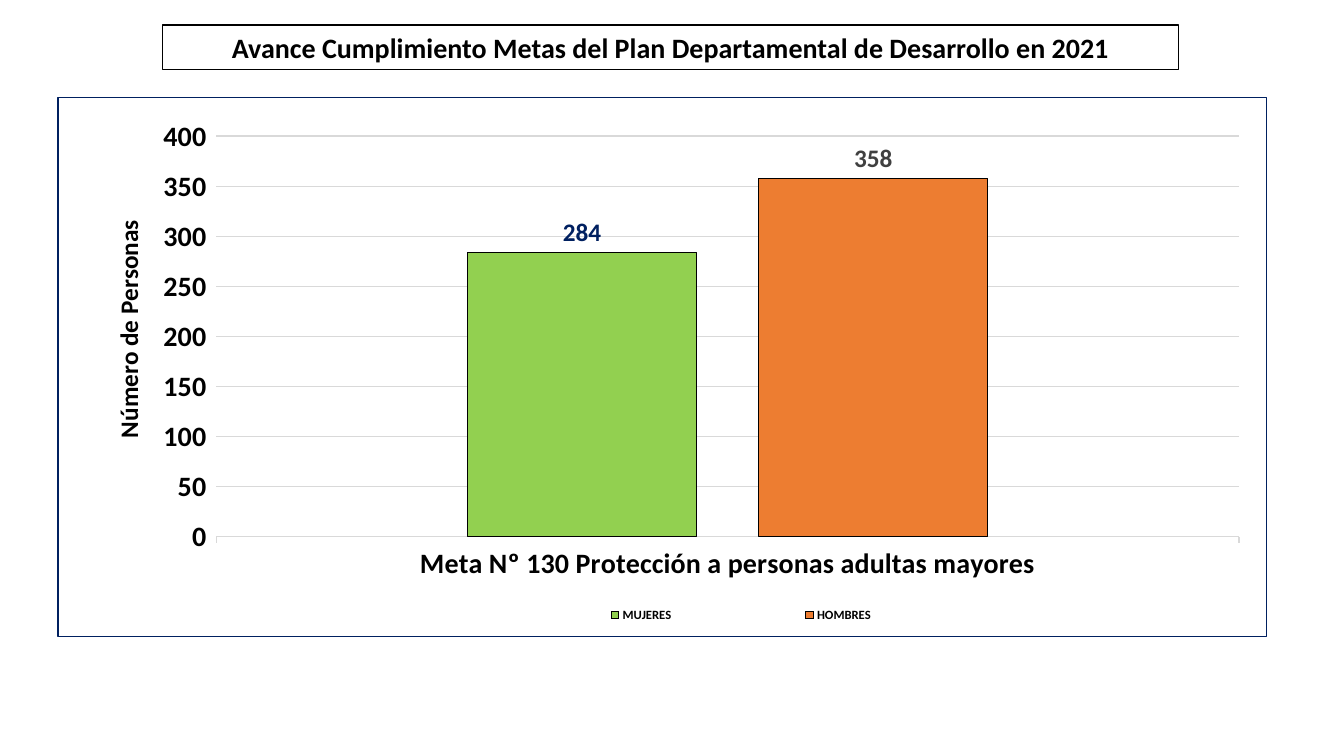
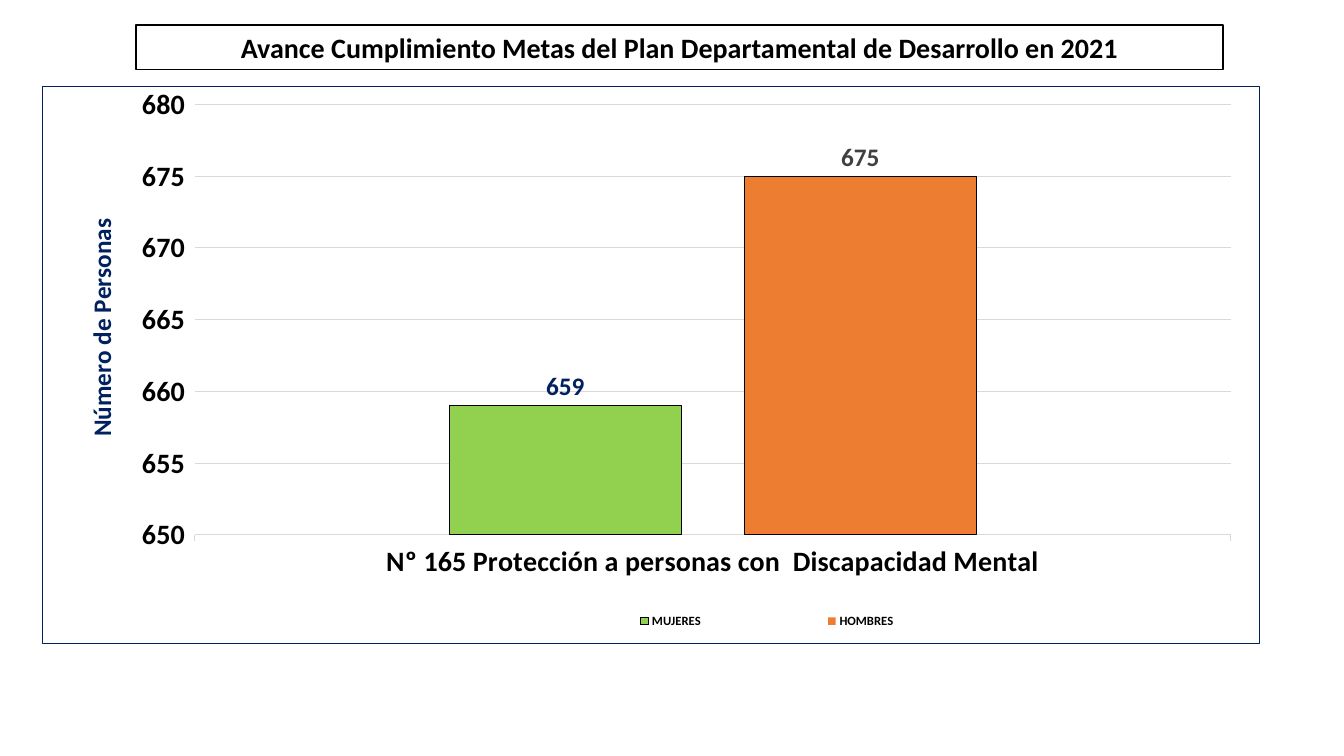
from lxml import etree
from pptx import Presentation
from pptx.chart.data import CategoryChartData
from pptx.dml.color import RGBColor
from pptx.enum.chart import XL_CHART_TYPE, XL_LABEL_POSITION, XL_LEGEND_POSITION, XL_TICK_MARK
from pptx.enum.shapes import MSO_SHAPE
from pptx.enum.text import MSO_ANCHOR, PP_ALIGN
from pptx.oxml import parse_xml
from pptx.oxml.ns import nsdecls, qn
from pptx.util import Inches, Pt

COLUMNS = XL_CHART_TYPE.COLUMN_CLUSTERED
OUTSIDE = XL_LABEL_POSITION.OUTSIDE_END
RIGHT = XL_LEGEND_POSITION.RIGHT
TICK_OUT, TICK_NONE = XL_TICK_MARK.OUTSIDE, XL_TICK_MARK.NONE
RECT = MSO_SHAPE.RECTANGLE
MIDDLE, CENTER = MSO_ANCHOR.MIDDLE, PP_ALIGN.CENTER

BLACK = RGBColor(0x00, 0x00, 0x00)
WHITE = RGBColor(0xFF, 0xFF, 0xFF)
NAVY = RGBColor(0x00, 0x20, 0x60)
GRAY = RGBColor(0x40, 0x40, 0x40)
GRID = RGBColor(0xD9, 0xD9, 0xD9)
GREEN = RGBColor(0x92, 0xD0, 0x50)
ORANGE = RGBColor(0xED, 0x7D, 0x31)

FONT = "Calibri"
TITLE = "Avance Cumplimiento Metas del Plan Departamental de Desarrollo en 2021"
SERIES_STYLE = [(GREEN, NAVY), (ORANGE, GRAY)]  # bar, label

# Layouts are x, y, width, height as shares of the chart
SLIDES = [
    dict(title=(1.61, 10.08), frame=(0.57, 0.96, 12, 5.36),
         goal="Meta Nº 130 Protección a personas adultas mayores",
         values=(284, 358), scale=(0, 400, 50), axis_color=BLACK, outline_series=True,
         plot=(0.131, 0.072, 0.846, 0.743), axis_title=(0.04, 0.22),
         legend=(0.35, 0.93, 0.43, 0.06)),
    dict(title=(1.35, 10.78), frame=(0.42, 0.85, 12.08, 5.54),
         goal="Nº 165 Protección a personas con  Discapacidad Mental",
         values=(659, 675), scale=(650, 680, 5), axis_color=NAVY, outline_series=False,
         plot=(0.125, 0.033, 0.851, 0.772), axis_title=(0.03, 0.23),
         legend=(0.39, 0.93, 0.41, 0.06)),
]


def set_font(font, size, color, bold=True):
    font.name, font.size, font.bold = FONT, Pt(size), bold
    font.color.rgb = color


def set_layout(parent, index, shares, inner=False):
    """Place a chart part by hand; index is the layout's place in its parent."""
    for old in parent.findall(qn("c:layout")):
        parent.remove(old)
    layout = parse_xml(f"<c:layout {nsdecls('c')}><c:manualLayout/></c:layout>")
    settings = [("layoutTarget", "inner")] if inner else []
    settings += [("xMode", "edge"), ("yMode", "edge")]
    settings += zip("xywh", shares)
    for tag, value in settings:
        etree.SubElement(layout[0], qn("c:" + tag)).set("val", str(value))
    parent.insert(index, layout)


prs = Presentation()
prs.slide_width, prs.slide_height = Inches(13.33), Inches(7.5)

for page in SLIDES:
    s = prs.slides.add_slide(prs.slide_layouts[6])

    # Boxed title
    left, width = page["title"]
    sp = s.shapes.add_shape(RECT, Inches(left), Inches(0.25), Inches(width), Inches(0.44))
    sp.shadow.inherit = False
    sp.fill.solid()
    sp.fill.fore_color.rgb = WHITE
    sp.line.color.rgb = BLACK
    sp.line.width = Pt(1)
    tf = sp.text_frame
    tf.text = TITLE
    tf.word_wrap = True
    tf.vertical_anchor = MIDDLE
    p = tf.paragraphs[0]
    p.alignment = CENTER
    set_font(p.runs[0].font, 20, BLACK)

    # Chart with a thin frame
    data = CategoryChartData()
    data.categories = [page["goal"]]
    for name, value in zip(("MUJERES", "HOMBRES"), page["values"]):
        data.add_series(name, [value])
    frame = [Inches(v) for v in page["frame"]]
    chart = s.shapes.add_chart(COLUMNS, *frame, data).chart
    chart.has_title = False
    set_font(chart.font, 10, BLACK, False)
    chart_xml = chart.element.find(qn("c:chart"))
    chart_xml.addnext(parse_xml(
        f"<c:spPr {nsdecls('c', 'a')}><a:solidFill><a:srgbClr val='{WHITE}'/></a:solidFill>"
        f"<a:ln w='{Pt(0.75)}'><a:solidFill><a:srgbClr val='{NAVY}'/></a:solidFill></a:ln></c:spPr>"))
    set_layout(chart_xml.find(qn("c:plotArea")), 0, page["plot"], inner=True)

    # Columns and their labels
    plot = chart.plots[0]
    plot.gap_width, plot.overlap = 219, -27
    plot.vary_by_categories = False
    for i, (series, (bar_color, label_color)) in enumerate(zip(plot.series, SERIES_STYLE)):
        series.format.fill.solid()
        series.format.fill.fore_color.rgb = bar_color
        bar = series
        if i == 1 and not page["outline_series"]:
            bar = series.points[0]
            bar.format.fill.solid()
            bar.format.fill.fore_color.rgb = bar_color
        bar.format.line.color.rgb = BLACK
        bar.format.line.width = Pt(0.75)
        labels = series.data_labels
        labels.show_value = True
        labels.position = OUTSIDE
        set_font(labels.font, 18, label_color)

    # Axes
    cat, val = chart.category_axis, chart.value_axis
    for axis in (cat, val):
        axis.major_tick_mark, axis.minor_tick_mark = TICK_OUT, TICK_NONE
        set_font(axis.tick_labels.font, 20, BLACK)
    val.minimum_scale, val.maximum_scale, val.major_unit = page["scale"]
    val.format.line.fill.background()
    for line in (cat.format.line, val.major_gridlines.format.line):
        line.color.rgb = GRID
        line.width = Pt(0.75)
    tf = val.axis_title.text_frame
    tf.text = "Número de Personas"
    set_font(tf.paragraphs[0].runs[0].font, 18, page["axis_color"])
    set_layout(chart_xml.find(".//" + qn("c:valAx")).find(qn("c:title")), 1, page["axis_title"])

    # Legend
    chart.has_legend = True
    chart.legend.position = RIGHT
    chart.legend.include_in_layout = False
    set_font(chart.legend.font, 9, BLACK)
    set_layout(chart_xml.find(qn("c:legend")), 1, page["legend"])

prs.save("out.pptx")
